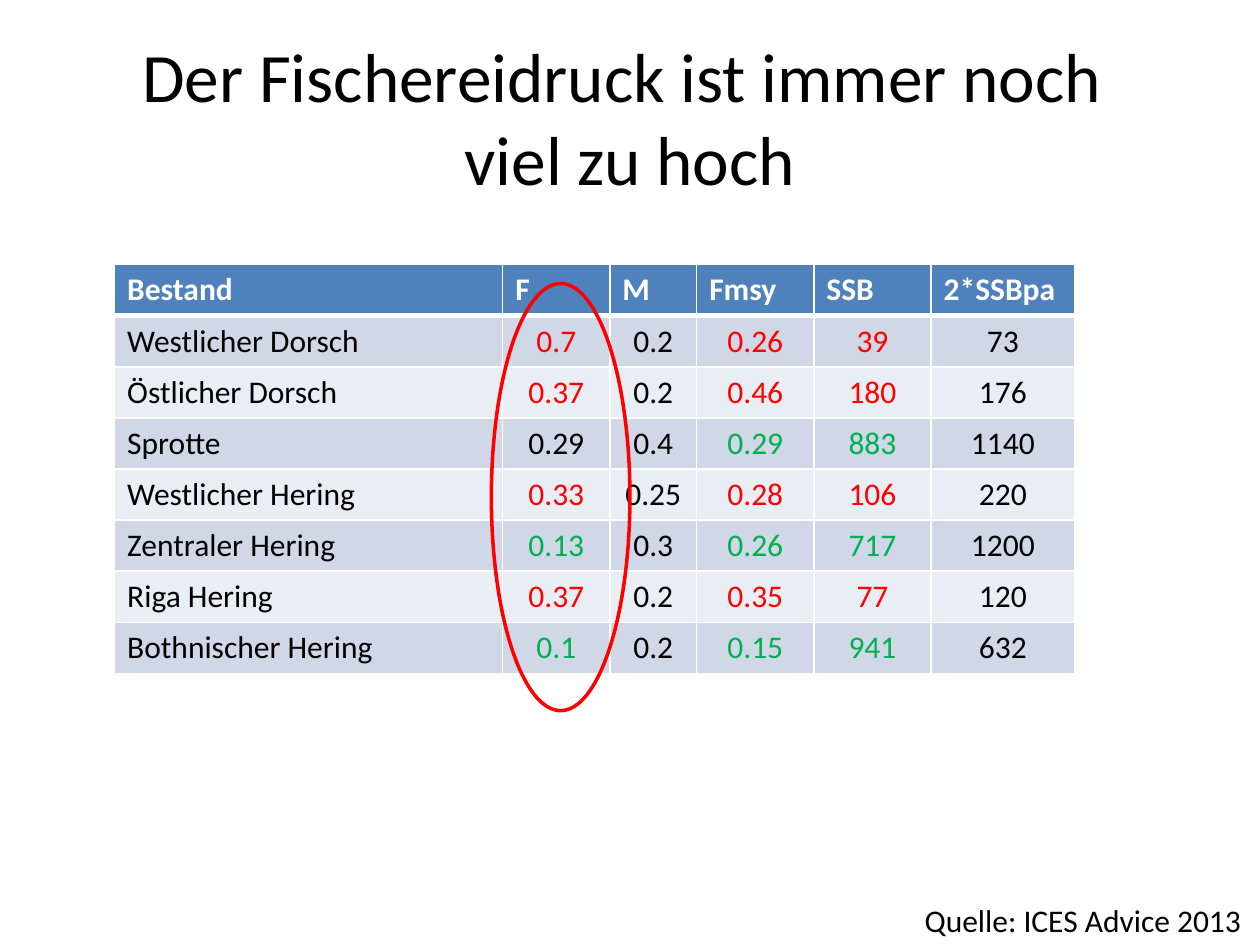
from lxml.etree import SubElement
from pptx import Presentation
from pptx.dml.color import RGBColor
from pptx.enum.shapes import MSO_SHAPE
from pptx.enum.text import MSO_ANCHOR, MSO_AUTO_SIZE, PP_ALIGN
from pptx.oxml.ns import qn
from pptx.util import Inches, Pt

BLACK, WHITE, RED, GREEN = "000000", "FFFFFF", "FF0000", "00B050"
HEADER_FILL, BANDS = "4F81BD", ("D0D8E8", "E9EDF4")
TITLE_LINES = ("Der Fischereidruck ist immer noch ", "viel zu hoch")
SOURCE = "Quelle: ICES Advice 2013"
HEADINGS = ("Bestand", "F", "M", "Fmsy", "SSB", "2*SSBpa")
COLUMN_WIDTHS = (3.08, 0.85, 0.69, 0.93, 0.93, 1.14)
TABLE_LEFT, TABLE_TOP, TABLE_HEIGHT = 0.91, 2.1, 3.24
STOCKS = (
    (("Westlicher Dorsch", "0.7", "0.2", "0.26", "39", "73"), RED, RED),
    (("Östlicher Dorsch", "0.37", "0.2", "0.46", "180", "176"), RED, RED),
    (("Sprotte", "0.29", "0.4", "0.29", "883", "1140"), BLACK, GREEN),
    (("Westlicher Hering", "0.33", "0.25", "0.28", "106", "220"), RED, RED),
    (("Zentraler Hering", "0.13", "0.3", "0.26", "717", "1200"), GREEN, GREEN),
    (("Riga Hering", "0.37", "0.2", "0.35", "77", "120"), RED, RED),
    (("Bothnischer Hering", "0.1", "0.2", "0.15", "941", "632"), GREEN, GREEN),
)


def rgb(value):
    return RGBColor.from_string(value)


def box(*lengths):
    return [Inches(length) for length in lengths]


def add_run(paragraph, text, size, color=BLACK, bold=False):
    run = paragraph.add_run()
    run.text = text
    run.font.name, run.font.size, run.font.bold = "Calibri", Pt(size), bold
    run.font.color.rgb = rgb(color)


def fill_cell(cell, text, fill, color, bold=False, align=PP_ALIGN.LEFT):
    cell.fill.solid()
    cell.fill.fore_color.rgb = rgb(fill)
    paragraph = cell.text_frame.paragraphs[0]
    paragraph.alignment = align
    add_run(paragraph, text, 18, color, bold)


def underline_cell(cell, color, width):
    properties = cell._tc.get_or_add_tcPr()
    border = SubElement(properties, qn("a:lnB"), w=str(Pt(width)))
    SubElement(SubElement(border, qn("a:solidFill")), qn("a:srgbClr"), val=color)
    properties.insert(0, border)


def add_title(slide):
    title = slide.shapes.title
    title.left, title.top, title.width, title.height = box(0.5, 0.3, 9, 1.25)
    frame = title.text_frame
    frame.auto_size = MSO_AUTO_SIZE.NONE
    frame.vertical_anchor = MSO_ANCHOR.MIDDLE
    paragraph = frame.paragraphs[0]
    paragraph.alignment = PP_ALIGN.CENTER
    first, second = TITLE_LINES
    add_run(paragraph, first, 39.6)
    paragraph.add_line_break()
    add_run(paragraph, second, 39.6)


def add_stock_table(slide):
    row_count = len(STOCKS) + 1
    place = box(TABLE_LEFT, TABLE_TOP, sum(COLUMN_WIDTHS), TABLE_HEIGHT)
    table = slide.shapes.add_table(row_count, len(HEADINGS), *place).table
    for column, width in zip(table.columns, COLUMN_WIDTHS):
        column.width = Inches(width)
    for row in table.rows:
        row.height = Inches(TABLE_HEIGHT / row_count)
    for column, heading in enumerate(HEADINGS):
        fill_cell(table.cell(0, column), heading, HEADER_FILL, WHITE, bold=True)
        underline_cell(table.cell(0, column), WHITE, 3)
    for row, (values, pressure, stock_state) in enumerate(STOCKS):
        colors = (BLACK, pressure, BLACK, stock_state, stock_state, BLACK)
        for column, (value, color) in enumerate(zip(values, colors)):
            align = PP_ALIGN.CENTER if column else PP_ALIGN.LEFT
            fill_cell(table.cell(row + 1, column), value, BANDS[row % 2], color, align=align)


def add_source(slide):
    frame = slide.shapes.add_textbox(*box(7.24, 7.1, 2.74, 0.4)).text_frame
    frame.word_wrap = False
    frame.auto_size = MSO_AUTO_SIZE.SHAPE_TO_FIT_TEXT
    add_run(frame.paragraphs[0], SOURCE, 18)


def add_pressure_ring(slide):
    ring = slide.shapes.add_shape(MSO_SHAPE.OVAL, *box(3.9, 2.25, 1.1, 3.39))
    ring.shadow.inherit = False
    ring.fill.background()
    ring.line.color.rgb = rgb(RED)
    ring.line.width = Pt(2)


def main():
    """Build the slide with the table of stocks and the ringed F column."""
    deck = Presentation()
    deck.slide_width, deck.slide_height = box(10, 7.5)
    slide = deck.slides.add_slide(deck.slide_layouts[5])
    add_title(slide)
    add_stock_table(slide)
    add_source(slide)
    add_pressure_ring(slide)
    deck.save("out.pptx")


if __name__ == "__main__":
    main()
